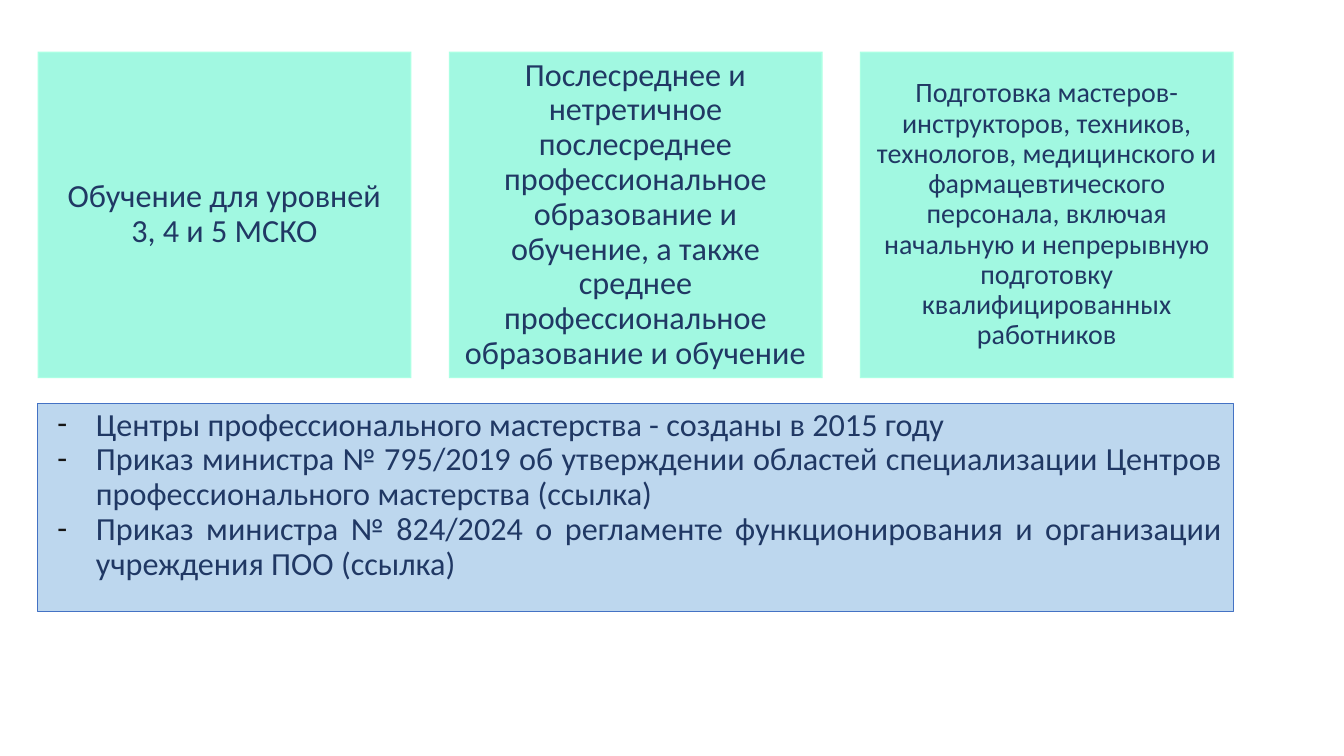
from lxml.etree import SubElement
from pptx import Presentation
from pptx.dml.color import RGBColor
from pptx.enum.shapes import MSO_SHAPE as Shape
from pptx.enum.text import MSO_ANCHOR as Anchor, PP_ALIGN as Align
from pptx.oxml.ns import qn
from pptx.util import Cm, Pt

COLORS = {
    "base": "EAF0FC",
    "white": "FFFFFF",
    "mint": "66FFCC",
    "panel": "BDD7EE",
    "border": "4472C4",
    "text": "203864",
    "bullet": "151515",
}


def add_box(left, top, width, height, fill, line=None, line_width=0.75):
    shape = slide.shapes.add_shape(Shape.RECTANGLE, Cm(left), Cm(top), Cm(width), Cm(height))
    shape.shadow.inherit = False
    shape.fill.solid()
    shape.fill.fore_color.rgb = RGBColor.from_string(COLORS[fill])
    if line:
        shape.line.color.rgb = RGBColor.from_string(COLORS[line])
        shape.line.width = Pt(line_width)
    else:
        shape.line.fill.background()
    return shape


def write(paragraph, text, size=23, align=Align.CENTER, bullet=None):
    paragraph.alignment = align
    paragraph.line_spacing = 0.9
    if bullet:
        paragraph.level = 1
        properties = paragraph._p.get_or_add_pPr()
        properties.set("marL", str(Cm(1.22)))
        properties.set("indent", str(Cm(-0.97)))
        color = SubElement(properties, qn("a:buClr"))
        SubElement(color, qn("a:srgbClr"), val=COLORS["bullet"])
        SubElement(properties, qn("a:buFont"), typeface="Calibri")
        SubElement(properties, qn("a:buChar"), char=bullet)
    run = paragraph.add_run()
    run.text = text
    run.font.name = "Calibri"
    run.font.size = Pt(size)
    run.font.color.rgb = RGBColor.from_string(COLORS["text"])


presentation = Presentation()
presentation.slide_width = Cm(33.87)
presentation.slide_height = Cm(19.05)
slide = presentation.slides.add_slide(presentation.slide_layouts[6])

# Three cards: a pale base under a translucent mint layer with the text
LEFT, CARD_TOP, CARD_WIDTH, CARD_HEIGHT, CARD_STEP = 0.95, 1.3, 9.42, 8.23, 10.36
cards = [
    ("Обучение для уровней 3, 4 и 5 МСКО", 23),
    ("Послесреднее и нетретичное послесреднее профессиональное образование и обучение, "
     "а также среднее профессиональное образование и обучение", 23),
    ("Подготовка мастеров-инструкторов, техников, технологов, медицинского и "
     "фармацевтического персонала, включая начальную и непрерывную подготовку "
     "квалифицированных работников", 20),
]
for index, (text, size) in enumerate(cards):
    place = (LEFT + index * CARD_STEP, CARD_TOP, CARD_WIDTH, CARD_HEIGHT)
    add_box(*place, "base", line="white", line_width=2)
    card = add_box(*place, "mint")
    mint = card.fill._xPr.find(qn("a:solidFill"))[0]
    SubElement(mint, qn("a:alpha"), val="55000")
    frame = card.text_frame
    frame.word_wrap = True
    frame.vertical_anchor = Anchor.MIDDLE
    frame.margin_left = frame.margin_right = Cm(0.38)
    frame.margin_top = frame.margin_bottom = Cm(0.38)
    write(frame.paragraphs[0], text, size=size)

# Panel with the legal basis
panel = add_box(LEFT, 10.16, 2 * CARD_STEP + CARD_WIDTH, 5.26, "panel", line="border")
frame = panel.text_frame
frame.word_wrap = True
frame.vertical_anchor = Anchor.TOP
frame.margin_left = frame.margin_right = Cm(0.25)
frame.margin_top = frame.margin_bottom = Cm(0.13)
items = [
    "Центры профессионального мастерства - созданы в 2015 году",
    "Приказ министра № 795/2019 об утверждении областей специализации Центров "
    "профессионального мастерства (ссылка)",
    "Приказ министра № 824/2024 о регламенте функционирования и организации "
    "учреждения ПОО (ссылка)",
]
for index, text in enumerate(items):
    paragraph = frame.add_paragraph() if index else frame.paragraphs[0]
    write(paragraph, text, align=Align.JUSTIFY, bullet="-")

presentation.save("out.pptx")
